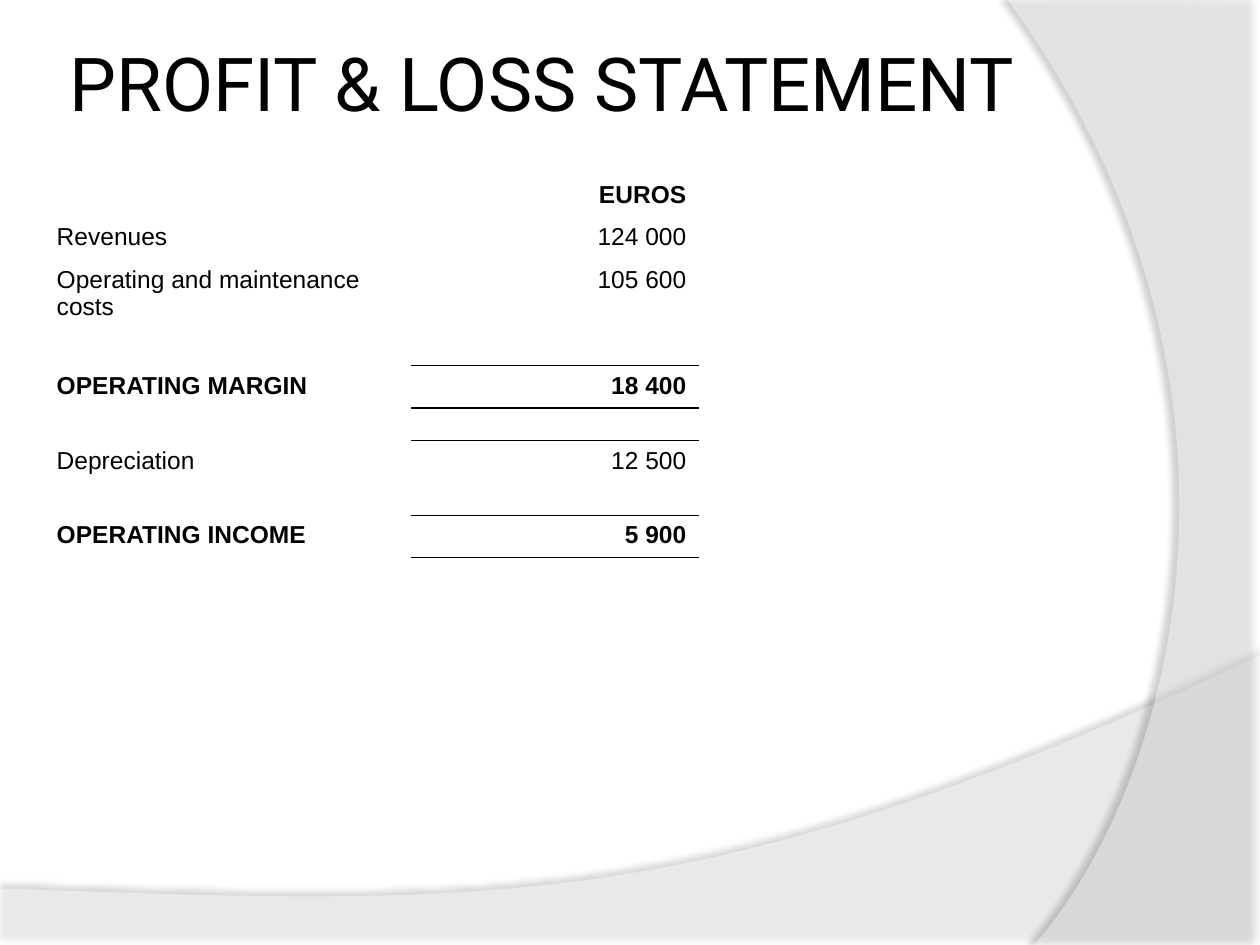
import lxml.etree
import pptx
import pptx.dml.color
import pptx.enum.text
import pptx.oxml.ns
import pptx.util

Cm = pptx.util.Cm
Pt = pptx.util.Pt
qn = pptx.oxml.ns.qn

BLACK, WHITE = "000000", "FFFFFF"
NO_TABLE_STYLE = "{2D5ABB26-0587-4C30-8999-92F81FD0307C}"
CURVE_STEPS = 40

# label, amount, row height in cm, whether the row is a ruled total
STATEMENT = [
    ("", "EUROS", 0.85, False),
    ("Revenues", "124 000", 0.85, False),
    ("Operating and maintenance costs", "105 600", 1.4, False),
    ("", "", 0.7, False),
    ("OPERATING MARGIN", "18 400", 0.85, True),
    ("", "", 0.66, False),
    ("Depreciation", "12 500", 0.85, False),
    ("", "", 0.66, False),
    ("OPERATING INCOME", "5 900", 0.85, True),
    ("", "", 0.66, False),
]


def rgb(hex_color):
    return pptx.dml.color.RGBColor.from_string(hex_color)


def add_element(parent, tag, **attributes):
    child = lxml.etree.SubElement(parent, qn(tag))
    for name, value in attributes.items():
        child.set(name, str(value))
    return child


def bezier(start, control_1, control_2, end):
    """Return points along a cubic curve, both ends included."""
    points = []
    for step in range(CURVE_STEPS + 1):
        t = step / CURVE_STEPS
        weights = ((1 - t) ** 3, 3 * t * (1 - t) ** 2, 3 * t * t * (1 - t), t ** 3)
        corners = (start, control_1, control_2, end)
        points.append(tuple(sum(w * corner[axis] for w, corner in zip(weights, corners))
                            for axis in (0, 1)))
    return points


def add_wave(slide, box, outline, opacity, shadow_opacity, shadow_distance, shadow_angle):
    """Draw a translucent white outline, given in cm from the box corner."""
    left, top = box
    points = [(Cm(left + x), Cm(top + y)) for x, y in outline]
    builder = slide.shapes.build_freeform(*points[0], scale=1.0)
    builder.add_line_segments(points[1:], close=True)
    wave = builder.convert_to_shape()
    wave.line.fill.background()
    wave.fill.solid()
    wave.fill.fore_color.rgb = rgb(WHITE)
    wave.shadow.inherit = False
    properties = wave._element.spPr
    fill_color = properties.find(qn("a:solidFill")).find(qn("a:srgbClr"))
    add_element(fill_color, "a:alpha", val=opacity * 1000)
    shadow = add_element(properties.find(qn("a:effectLst")), "a:outerShdw",
                         blurRad=Pt(4), dist=Pt(shadow_distance),
                         dir=shadow_angle * 60000, algn="ctr", rotWithShape=0)
    shadow_color = add_element(shadow, "a:srgbClr", val=BLACK)
    add_element(shadow_color, "a:alpha", val=shadow_opacity * 1000)


def add_background(slide, width, height):
    wave_top, side_left = 13.21, 20.32
    wave_height, side_width = height - wave_top, width - side_left
    bottom_curve = bezier((width, 0), (14.2, 5.31), (9.93, 5.05), (0, 4.7))
    add_wave(slide, (0, wave_top),
             [(0, wave_height), (width, wave_height)] + bottom_curve,
             opacity=45, shadow_opacity=35, shadow_distance=3.5, shadow_angle=270)
    side_curve = bezier((0.53, height), (3.43, 15.72), (5.54, 7.62), (0, 0))
    add_wave(slide, (side_left, 0),
             [(side_width, 0.05), (side_width, height)] + side_curve,
             opacity=40, shadow_opacity=45, shadow_distance=4, shadow_angle=180)


def add_title(slide, left, top, width, height):
    frame = slide.shapes.add_textbox(Cm(left), Cm(top), Cm(width), Cm(height)).text_frame
    frame.word_wrap = True
    frame.vertical_anchor = pptx.enum.text.MSO_ANCHOR.MIDDLE
    frame.margin_left = frame.margin_right = Cm(0.13)
    frame.margin_top = frame.margin_bottom = Cm(0.13)
    title = frame.paragraphs[0]
    title.text = "PROFIT & LOSS STATEMENT"
    title.font.name = "Roboto"
    title.font.size = Pt(42.5)
    title.font.color.rgb = rgb(BLACK)


def add_rule(cell, side):
    rule = add_element(cell._tc.get_or_add_tcPr(), side, w=Pt(1))
    add_element(add_element(rule, "a:solidFill"), "a:srgbClr", val=BLACK)


def fill_cell(cell, text, bold, alignment):
    cell.fill.background()
    paragraph = cell.text_frame.paragraphs[0]
    paragraph.text = text
    paragraph.alignment = alignment
    paragraph.font.name = "Arial"
    paragraph.font.size = Pt(14 if text else 8)
    paragraph.font.bold = bold
    paragraph.font.color.rgb = rgb(BLACK)


def add_statement(slide, left, top, width):
    label_width = 7.4
    height = sum(row[2] for row in STATEMENT)
    table = slide.shapes.add_table(len(STATEMENT), 2, Cm(left), Cm(top),
                                   Cm(width), Cm(height)).table
    table.first_row = table.horz_banding = False
    table._tbl.tblPr.find(qn("a:tableStyleId")).text = NO_TABLE_STYLE
    table.columns[0].width = Cm(label_width)
    table.columns[1].width = Cm(width - label_width)
    totals = [False] + [row[3] for row in STATEMENT] + [False]
    for index, (label, amount, row_height, is_total) in enumerate(STATEMENT):
        table.rows[index].height = Cm(row_height)
        label_cell, amount_cell = table.cell(index, 0), table.cell(index, 1)
        if is_total or totals[index]:
            add_rule(amount_cell, "a:lnT")
        if is_total or totals[index + 2]:
            add_rule(amount_cell, "a:lnB")
        bold = is_total or index == 0
        fill_cell(label_cell, label, bold, pptx.enum.text.PP_ALIGN.LEFT)
        fill_cell(amount_cell, amount, bold, pptx.enum.text.PP_ALIGN.RIGHT)


def main():
    width, height = 25.4, 19.05
    presentation = pptx.Presentation()
    presentation.slide_width, presentation.slide_height = Cm(width), Cm(height)
    slide = presentation.slides.add_slide(presentation.slide_layouts[6])
    add_background(slide, width, height)
    add_title(slide, 1.27, 0.64, 22.86, 2.03)
    add_statement(slide, 0.89, 3.53, 13.2)
    presentation.save("out.pptx")


if __name__ == "__main__":
    main()
